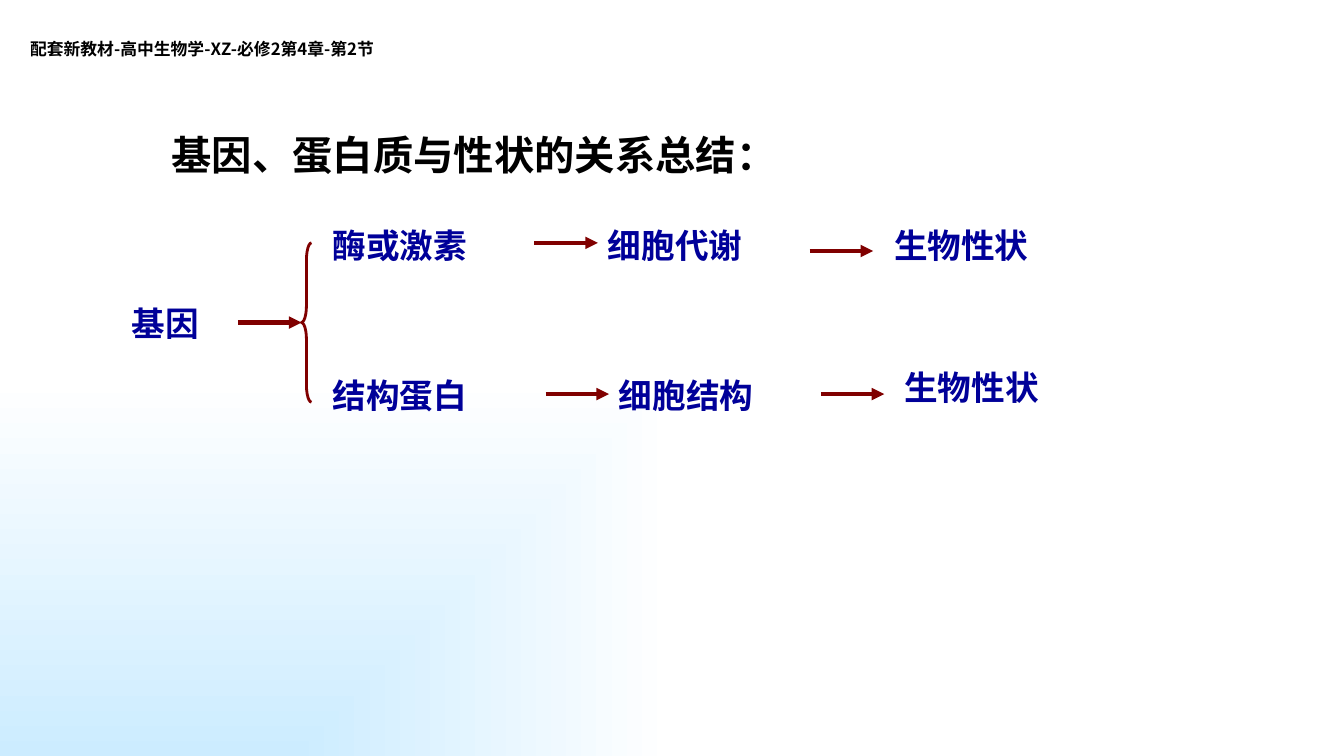
from lxml import etree
from pptx import Presentation
from pptx import util as u
from pptx.dml.color import RGBColor
from pptx.enum import shapes, text
from pptx.oxml import parse_xml
from pptx.oxml.ns import nsdecls, qn

FONT = "Noto Sans CJK SC"
COLORS = {"heading": "000000", "term": "000099", "link": "800000",
          "corner": "CCECFF", "page": "FFFFFF"}
SLIDE_WIDTH, SLIDE_HEIGHT = u.Inches(13.33), u.Inches(7.5)
TERM_HEIGHT, ARROW_LENGTH = 6.67, 4.73

# Positions are percentages of the slide's width and height.
TERMS = [
    ("基因", 9.08, 39.47, 11.03),
    ("酶或激素", 24, 29.07, 18.9),
    ("细胞代谢", 44.49, 29.07, 18.9),
    ("生物性状", 65.79, 29.07, 18.9),
    ("结构蛋白", 24, 48.93, 18.9),
    ("细胞结构", 45.31, 48.93, 18.9),
    ("生物性状", 66.54, 47.87, 18.9),
]
ARROWS = [(17.7, 42.67), (39.76, 32.13), (60.24, 33.2),
          (40.59, 52.13), (61.07, 52.13)]


def across(percent):
    return round(SLIDE_WIDTH * percent / 100)


def down(percent):
    return round(SLIDE_HEIGHT * percent / 100)


def area(left, top, width, height):
    return across(left), down(top), across(width), down(height)


def set_all(target, values):
    for name, value in values.items():
        setattr(target, name, value)


def write(frame, words, size, color):
    frame.word_wrap = True
    paragraph = frame.paragraphs[0]
    paragraph.alignment = text.PP_ALIGN.LEFT
    run = paragraph.add_run()
    run.text = words
    set_all(run.font, {"size": u.Pt(size), "bold": True, "name": FONT})
    run.font.color.rgb = RGBColor.from_string(COLORS[color])
    east_asian = etree.SubElement(run.font._element, qn("a:ea"))
    east_asian.set("typeface", FONT)
    return paragraph


def paint_background(slide):
    """Fade from the lower left corner to the page colour."""
    slide.background.fill.solid()
    properties = slide.background._cSld.bg.bgPr
    gradient = parse_xml(
        f'<a:gradFill {nsdecls("a")} rotWithShape="0"><a:gsLst>'
        f'<a:gs pos="0"><a:srgbClr val="{COLORS["corner"]}"/></a:gs>'
        f'<a:gs pos="100000"><a:srgbClr val="{COLORS["page"]}"/></a:gs>'
        '</a:gsLst><a:path path="rect">'
        '<a:fillToRect l="0" t="100000" r="100000" b="0"/>'
        '</a:path></a:gradFill>')
    properties.replace(properties.find(qn("a:solidFill")), gradient)


def add_title(slide, words):
    title = slide.shapes.title
    left, top, width, height = area(9.98, 13.2, 90.02, 11.33)
    set_all(title, {"left": left, "top": top, "width": width, "height": height})
    set_all(title.text_frame, {"vertical_anchor": text.MSO_ANCHOR.MIDDLE,
                               "auto_size": text.MSO_AUTO_SIZE.NONE,
                               "margin_left": u.Inches(0.37)})
    write(title.text_frame, words, 28.8, "heading").line_spacing = 1.5


def add_label(slide, words, place, size, color):
    label = slide.shapes.add_textbox(*area(*place))
    write(label.text_frame, words, size, color)


def style_line(line, width):
    line.color.rgb = RGBColor.from_string(COLORS["link"])
    line.width = u.Pt(width)


def add_arrow(slide, left, top):
    arrow = slide.shapes.add_connector(
        shapes.MSO_CONNECTOR.STRAIGHT, across(left), down(top),
        across(left + ARROW_LENGTH), down(top))
    style_line(arrow.line, 3)
    etree.SubElement(arrow.line._get_or_add_ln(), qn("a:tailEnd")).set("type", "triangle")
    etree.SubElement(arrow._element.spPr, qn("a:effectLst"))


def add_brace(slide):
    brace = slide.shapes.add_shape(shapes.MSO_SHAPE.LEFT_BRACE,
                                   *area(22.43, 32.13, 0.75, 21.07))
    brace.shadow.inherit = False
    brace.adjustments[0] = 1.68
    brace.fill.background()
    style_line(brace.line, 2)


def main():
    deck = Presentation()
    set_all(deck, {"slide_width": SLIDE_WIDTH, "slide_height": SLIDE_HEIGHT})
    slide = deck.slides.add_slide(deck.slide_layouts[5])
    paint_background(slide)
    add_label(slide, "配套新教材-高中生物学-XZ-必修2第4章-第2节",
              (1.5, 4.53, 31.36, 4), 12, "heading")
    add_title(slide, "基因、蛋白质与性状的关系总结：")
    add_brace(slide)
    for words, left, top, width in TERMS:
        add_label(slide, words, (left, top, width, TERM_HEIGHT), 24, "term")
    for left, top in ARROWS:
        add_arrow(slide, left, top)
    deck.save("out.pptx")


if __name__ == "__main__":
    main()
